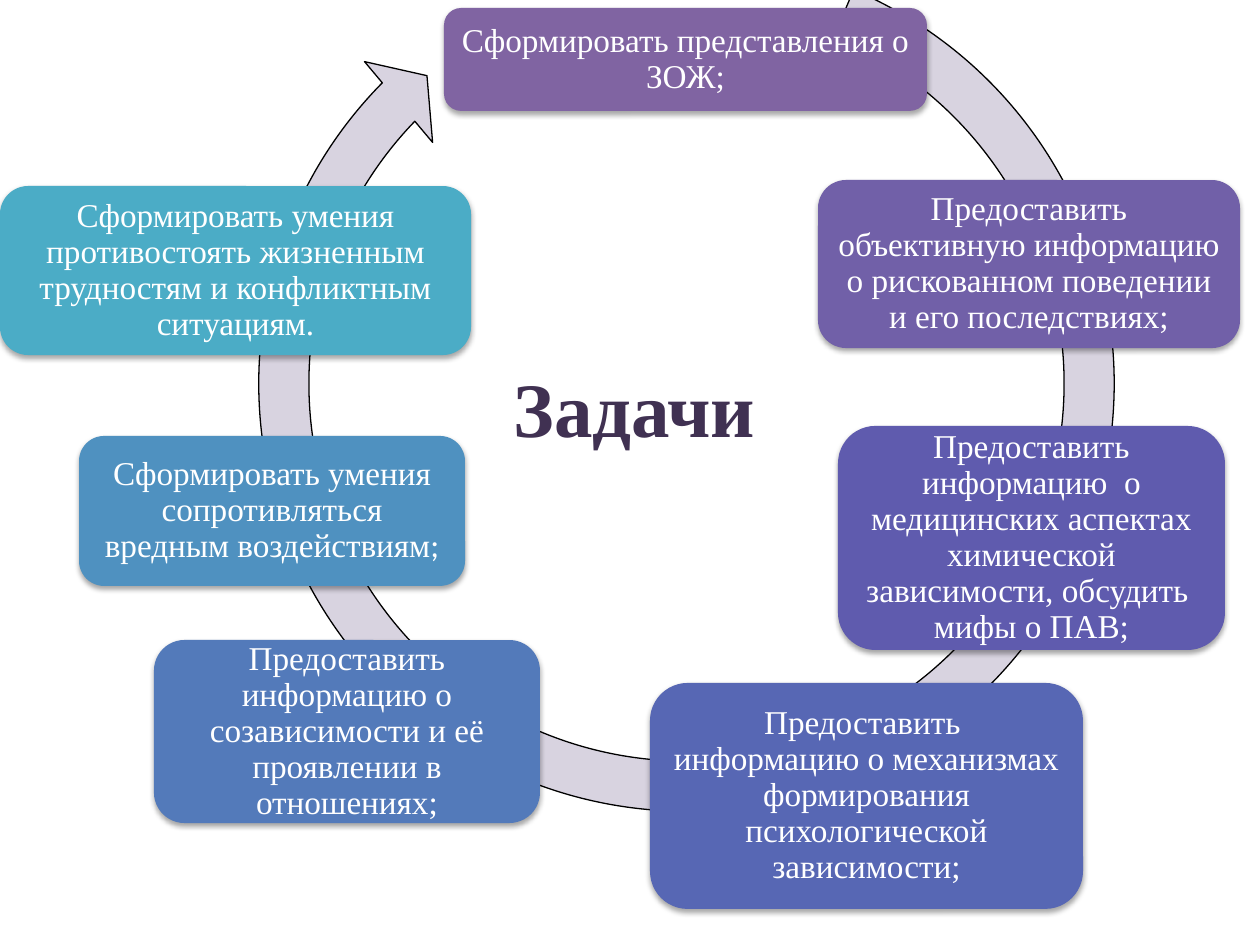
from lxml.etree import SubElement
from pptx import Presentation
from pptx.dml.color import RGBColor
from pptx.enum.shapes import MSO_SHAPE as Shape
from pptx.enum.text import MSO_ANCHOR as Anchor, MSO_AUTO_SIZE as AutoSize, PP_ALIGN as Align
from pptx.oxml.ns import qn
from pptx.util import Emu, Pt

PX_PER_INCH = 126
SLIDE_SIZE = (1260, 945)
SERIF, SANS = "Times New Roman", "Calibri"
WHITE = RGBColor(0xFF, 0xFF, 0xFF)
BLACK = RGBColor(0x00, 0x00, 0x00)
RING = RGBColor(0xD8, 0xD3, 0xE0)
TITLE_COLOR = RGBColor(0x40, 0x31, 0x52)
PURPLE = RGBColor(0x80, 0x64, 0xA2)
VIOLET = RGBColor(0x71, 0x60, 0xA8)
INDIGO = RGBColor(0x5F, 0x5B, 0xAE)
COBALT = RGBColor(0x57, 0x67, 0xB4)
BLUE = RGBColor(0x53, 0x7A, 0xBA)
SKY = RGBColor(0x4F, 0x91, 0xC0)
TEAL = RGBColor(0x4B, 0xAC, 0xC6)

TITLE = ("Задачи", (501, 354, 270, 106))
RING_PLACE = (231, -72, 911, 911)
RING_ADJUSTMENTS = (0.055, 3.307, 134.612, 175.806, 0.058)
TASKS = [
    ((444, 8, 483, 103), PURPLE, [("Сформировать представления о ЗОЖ;", SERIF)]),
    ((818, 180, 422, 168), VIOLET,
     [("Предоставить объективную информацию о рискованном поведении и его последствиях;", SERIF)]),
    ((838, 426, 387, 224), INDIGO,
     [("Предоставить информацию  о медицинских аспектах химической зависимости, "
       "обсудить  мифы о ПАВ;", SERIF)]),
    ((650, 683, 433, 226), COBALT,
     [("Предоставить  информацию о механизмах формирования психологической зависимости;", SERIF)]),
    ((154, 640, 386, 183), BLUE,
     [("Предоставить информацию о созависимости и её проявлении в отношениях;", SERIF)]),
    ((79, 436, 386, 150), SKY,
     [("Сформировать умения сопротивляться вредным воздействиям", SERIF), (";", SANS)]),
    ((0, 186, 471, 169), TEAL,
     [("Сформировать умения противостоять жизненным трудностям и конфликтным ситуациям.", SERIF)]),
]
MARGINS = ("margin_left", "margin_top", "margin_right", "margin_bottom")
TASK_FONT = {"size": Pt(19), "bold": False}
TITLE_FONT = {"size": Pt(44), "bold": True}


def px(length):
    return Emu(round(length * 914400 / PX_PER_INCH))


def apply(target, values):
    for name, value in values.items():
        setattr(target, name, value)


def add_span(para, text, font_name, color, font_values):
    span = para.add_run()
    span.text = text
    apply(span.font, {"name": font_name, **font_values})
    span.font.color.rgb = color


def add_filled(page, kind, place, color):
    shape = page.shapes.add_shape(kind, *map(px, place))
    shape.shadow.inherit = False
    shape.fill.solid()
    shape.fill.fore_color.rgb = color
    return shape


def add_shadow(shape):
    effects = shape._element.spPr.find(qn("a:effectLst"))
    shadow = SubElement(effects, qn("a:outerShdw"), blurRad=str(Pt(3.1)), dist=str(Pt(1.8)),
                        dir="5400000", rotWithShape="0")
    color = SubElement(shadow, qn("a:srgbClr"), val=str(BLACK))
    SubElement(color, qn("a:alpha"), val="35000")


def add_title(page):
    text, place = TITLE
    title = page.shapes.title
    apply(title, dict(zip(("left", "top", "width", "height"), map(px, place))))
    frame = title.text_frame
    apply(frame, {"word_wrap": False, "auto_size": AutoSize.SHAPE_TO_FIT_TEXT,
                  "vertical_anchor": Anchor.TOP})
    para = frame.paragraphs[0]
    para.alignment = Align.LEFT
    add_span(para, text, SERIF, TITLE_COLOR, TITLE_FONT)


def add_ring(page):
    ring = add_filled(page, Shape.CIRCULAR_ARROW, RING_PLACE, RING)
    ring.line.color.rgb = BLACK
    ring.line.width = Pt(0.75)
    for index, value in enumerate(RING_ADJUSTMENTS):
        ring.adjustments[index] = value


def add_task(page, place, color, spans):
    box = add_filled(page, Shape.ROUNDED_RECTANGLE, place, color)
    box.line.fill.background()
    add_shadow(box)
    frame = box.text_frame
    apply(frame, {"word_wrap": True, "vertical_anchor": Anchor.MIDDLE,
                  **dict.fromkeys(MARGINS, px(10))})
    para = frame.paragraphs[0]
    apply(para, {"alignment": Align.CENTER, "line_spacing": 0.9})
    for text, font_name in spans:
        add_span(para, text, font_name, WHITE, TASK_FONT)


def main():
    deck = Presentation()
    deck.slide_width, deck.slide_height = map(px, SLIDE_SIZE)
    page = deck.slides.add_slide(deck.slide_layouts[5])
    add_title(page)
    add_ring(page)
    for task in TASKS:
        add_task(page, *task)
    deck.save("out.pptx")


if __name__ == "__main__":
    main()
